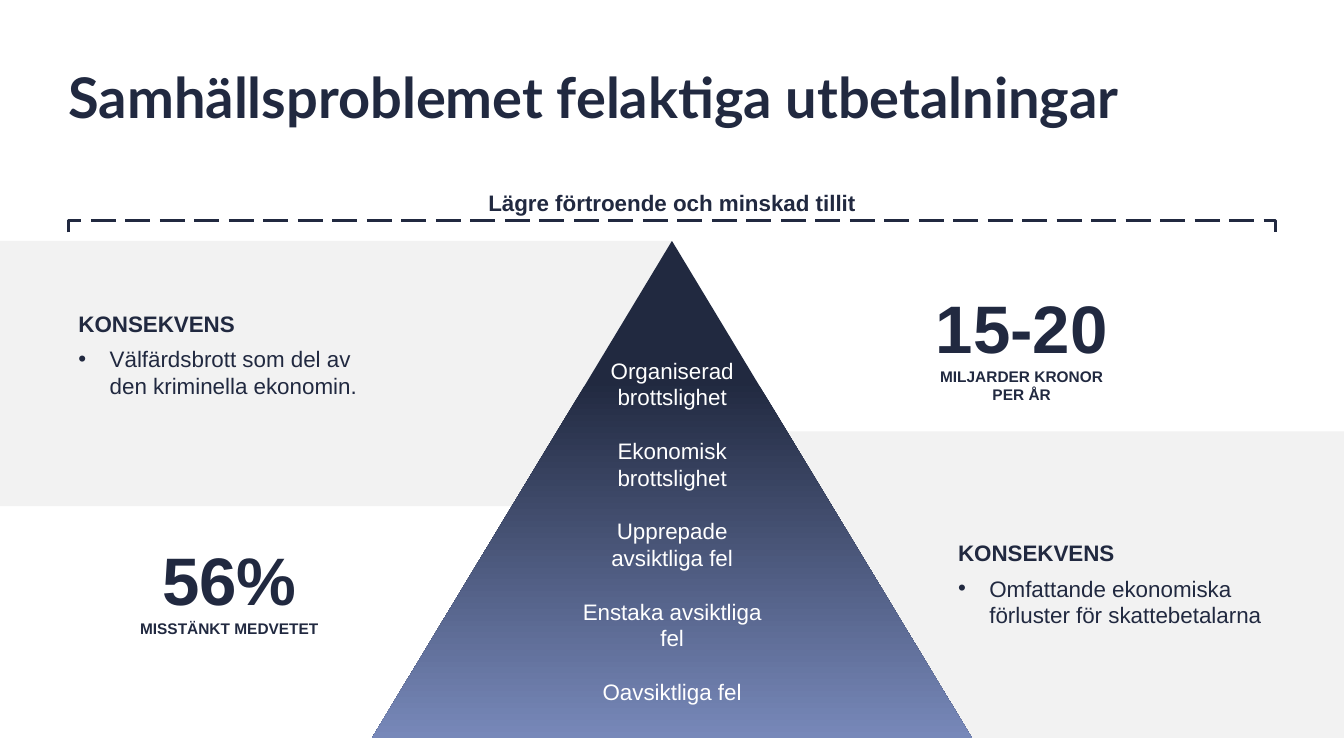
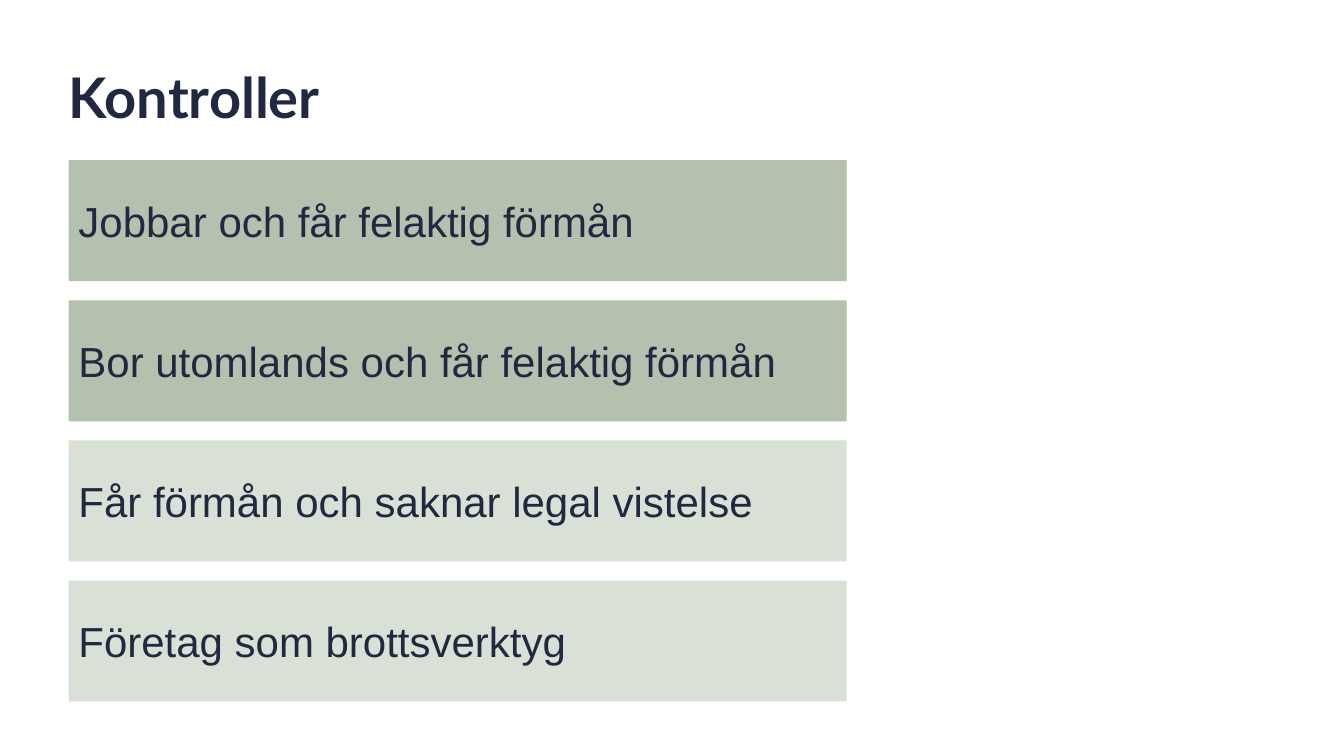
from dataclasses import dataclass

from lxml.etree import SubElement
from pptx import Presentation
from pptx.dml.color import RGBColor
from pptx.enum.dml import MSO_LINE
from pptx.enum.shapes import MSO_SHAPE as Preset
from pptx.enum.text import MSO_ANCHOR as Anchor, MSO_AUTO_SIZE as AutoSize, PP_ALIGN as Align
from pptx.oxml.ns import qn
from pptx.util import Inches, Pt


@dataclass(frozen=True)
class Theme:
    """Colours, fonts and type sizes of the deck."""
    ink: str = "212940"
    white: str = "FFFFFF"
    panel: str = "F2F2F2"
    pyramid_base: str = "7788B9"
    strong_green: str = "B4C1AE"
    pale_green: str = "D9E0D6"
    title_font: str = "Lato"
    body_font: str = "Arial"
    title: int = 40
    figure: int = 48
    control: int = 30
    body: int = 16
    caption: int = 11


THEME = Theme()


@dataclass(frozen=True)
class Box:
    """A rectangle whose areas are placed on a grid of 100 columns and 100 rows."""
    left: int
    top: int
    width: int
    height: int

    def area(self, column, row, columns, rows):
        """Return the area that covers the given columns and rows."""
        return Box(round(self.left + self.width * column / 100),
                   round(self.top + self.height * row / 100),
                   round(self.width * columns / 100),
                   round(self.height * rows / 100))

    def turned(self):
        """Return the box with its sides swapped around the same centre."""
        shift = (self.width - self.height) // 2
        return Box(self.left + shift, self.top - shift, self.height, self.width)

    def bounds(self):
        """Return left, top, width and height."""
        return self.left, self.top, self.width, self.height


def add_preset(slide, preset, box, color=None):
    """Add a preset shape without outline or shadow."""
    shape = slide.shapes.add_shape(preset, *box.bounds())
    shape.shadow.inherit = False
    shape.line.fill.background()
    if color:
        shape.fill.solid()
        shape.fill.fore_color.rgb = RGBColor.from_string(color)
    else:
        shape.fill.background()
    return shape


def add_frame(slide, box, anchor=Anchor.TOP):
    """Add a wrapping text box and return its text frame."""
    frame = slide.shapes.add_textbox(*box.bounds()).text_frame
    frame.word_wrap = True
    frame.auto_size = AutoSize.NONE
    frame.vertical_anchor = anchor
    return frame


def write(frame, text, size=THEME.body, color=THEME.ink, font=THEME.body_font,
          bold=False, align=Align.LEFT, before=0, bullet=False):
    """Write one formatted paragraph into a text frame."""
    first = frame.paragraphs[0]
    is_first = not first.runs
    paragraph = first if is_first else frame.add_paragraph()
    paragraph.alignment = align
    if not is_first:
        paragraph.space_before = Pt(before)
    if bullet:
        properties = paragraph._p.get_or_add_pPr()
        indent = Inches(0.31)
        properties.set("marL", str(indent))
        properties.set("indent", str(-indent))
        SubElement(properties, qn("a:buFont")).set("typeface", THEME.body_font)
        SubElement(properties, qn("a:buChar")).set("char", "•")
    run = paragraph.add_run()
    run.text = text
    run.font.name = font
    run.font.size = Pt(size)
    run.font.bold = bold
    run.font.color.rgb = RGBColor.from_string(color)


def add_title(slide, box, text):
    """Place the slide title."""
    frame = add_frame(slide, box, Anchor.MIDDLE)
    frame.margin_left = frame.margin_right = 0
    write(frame, text, size=THEME.title, font=THEME.title_font, bold=True)


def add_consequence(slide, box, text_cells, text, right_margin=0.1):
    """Place a grey panel with a heading and one bullet."""
    add_preset(slide, Preset.RECTANGLE, box, THEME.panel)
    frame = add_frame(slide, box.area(*text_cells))
    frame.margin_right = Inches(right_margin)
    write(frame, "KONSEKVENS", bold=True)
    write(frame, text, before=6, bullet=True)


def add_bracket(slide, box, text):
    """Place a caption above a dashed bracket."""
    bracket = add_preset(slide, Preset.LEFT_BRACKET, box.area(0, 74.7, 100, 25.3).turned())
    bracket.rotation = 90
    bracket.adjustments[0] = 0
    bracket.line.color.rgb = RGBColor.from_string(THEME.ink)
    bracket.line.width = Pt(2.25)
    bracket.line.dash_style = MSO_LINE.LONG_DASH
    write(add_frame(slide, box.area(0, 0, 100, 78)), text, bold=True, align=Align.CENTER)


def add_pyramid(slide, box, levels):
    """Place a gradient triangle with its levels listed from the top."""
    fill = add_preset(slide, Preset.ISOSCELES_TRIANGLE, box).fill
    fill.gradient()
    fill.gradient_angle = 270
    stops = ((0.28, THEME.ink), (1, THEME.pyramid_base))
    for stop, (position, color) in zip(fill.gradient_stops, stops):
        stop.position = position
        stop.color.rgb = RGBColor.from_string(color)
    frame = add_frame(slide, box.area(32.8, 22.3, 34.45, 73))
    for level in levels:
        write(frame, level, color=THEME.white, align=Align.CENTER, before=19)


def add_figure(slide, box, figure, caption):
    """Place a large figure over its caption."""
    frame = add_frame(slide, box)
    for text, size in ((figure, THEME.figure), (caption, THEME.caption)):
        write(frame, text, size=size, bold=True, align=Align.CENTER)


def add_controls(slide, box, controls):
    """Place a column of bars at an equal pitch."""
    bar_height = 22.35
    pitch = (100 - bar_height) / (len(controls) - 1)
    for index, (text, color) in enumerate(controls):
        bar = add_preset(slide, Preset.RECTANGLE,
                         box.area(0, index * pitch, 100, bar_height), color)
        bar.text_frame.word_wrap = True
        bar.text_frame.vertical_anchor = Anchor.MIDDLE
        write(bar.text_frame, text, size=THEME.control)


def add_slide(presentation, title):
    """Add a titled blank slide and return it with its box."""
    slide = presentation.slides.add_slide(presentation.slide_layouts[6])
    page = Box(0, 0, presentation.slide_width, presentation.slide_height)
    add_title(slide, page.area(5.1, 5.2, 89.8, 15.07), title)
    return slide, page


def build_problem(presentation):
    """Build the slide about the problem in society."""
    slide, page = add_slide(presentation, "Samhällsproblemet felaktiga utbetalningar")
    add_consequence(slide, page.area(0, 31.87, 50, 35.07), (10.2, 24.3, 65.8, 37.6),
                    "Välfärdsbrott som del av den kriminella ekonomin.", right_margin=1.4)
    add_consequence(slide, page.area(50, 57.07, 50, 40.53), (41.1, 33.6, 48.6, 32.6),
                    "Omfattande ekonomiska förluster för skattebetalarna")
    add_bracket(slide, page.area(5.1, 24.4, 89.8, 6.33), "Lägre förtroende och minskad tillit")
    add_pyramid(slide, page.area(27.69, 31.87, 44.62, 65.73), (
        "Organiserad brottslighet", "Ekonomisk brottslighet", "Upprepade avsiktliga fel",
        "Enstaka avsiktliga fel", "Oavsiktliga fel"))
    add_figure(slide, page.area(68.33, 37.2, 15.38, 17.07), "15-20", "MILJARDER KRONOR PER ÅR")
    add_figure(slide, page.area(9.38, 70.53, 15.38, 14.53), "56%", "MISSTÄNKT MEDVETET")


def build_controls(presentation):
    """Build the slide about controls."""
    slide, page = add_slide(presentation, "Kontroller")
    add_controls(slide, page.area(5.1, 21.2, 57.9, 71.6), (
        ("Jobbar och får felaktig förmån", THEME.strong_green),
        ("Bor utomlands och får felaktig förmån", THEME.strong_green),
        ("Får förmån och saknar legal vistelse", THEME.pale_green),
        ("Företag som brottsverktyg", THEME.pale_green)))


def main():
    """Build and save the presentation."""
    presentation = Presentation()
    presentation.slide_width = Inches(13.33)
    presentation.slide_height = Inches(7.5)
    build_problem(presentation)
    build_controls(presentation)
    presentation.save("out.pptx")


if __name__ == "__main__":
    main()
